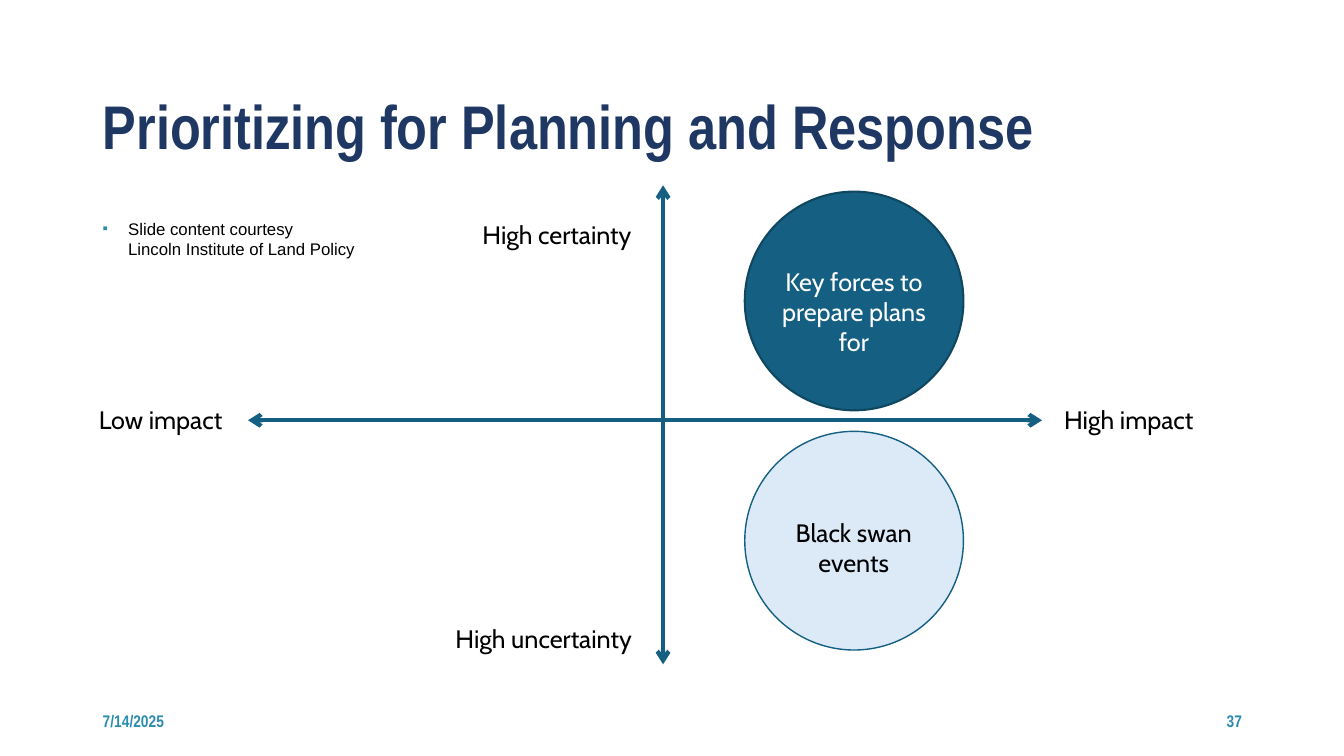
from dataclasses import dataclass

from lxml import etree
from pptx import Presentation
from pptx.dml.color import RGBColor
from pptx.enum.shapes import MSO_CONNECTOR, MSO_SHAPE
from pptx.enum.text import MSO_ANCHOR, PP_ALIGN
from pptx.oxml.ns import qn
from pptx.util import Cm, Pt

LEFT, CENTER, RIGHT = PP_ALIGN.LEFT, PP_ALIGN.CENTER, PP_ALIGN.RIGHT
TOP, MIDDLE = MSO_ANCHOR.TOP, MSO_ANCHOR.MIDDLE
STRAIGHT, OVAL = MSO_CONNECTOR.STRAIGHT, MSO_SHAPE.OVAL


@dataclass(frozen=True)
class Theme:
    navy: str = "1F3763"
    accent: str = "2C8CB0"
    teal: str = "156082"
    dark_teal: str = "104760"
    pale_blue: str = "DCEAF7"
    black: str = "000000"
    white: str = "FFFFFF"
    heading_font: str = "Arial Narrow"
    body_font: str = "Arial"
    label_font: str = "Cabin"
    title_size: int = 44
    label_size: int = 18
    small_size: int = 12


theme = Theme()


def add_text(box, text, font_name, size, color, bold=False, align=LEFT, anchor=TOP):
    shape = slide.shapes.add_textbox(*[Cm(value) for value in box])
    text_frame = shape.text_frame
    text_frame.text = text
    text_frame.word_wrap = True
    text_frame.vertical_anchor = anchor
    for paragraph in text_frame.paragraphs:
        paragraph.alignment = align
        for run in paragraph.runs:
            run.font.name = font_name
            run.font.size = Pt(size)
            run.font.bold = bold
            run.font.color.rgb = RGBColor.from_string(color)
    return text_frame.paragraphs[0]


presentation = Presentation()
presentation.slide_width, presentation.slide_height = Cm(33.87), Cm(19.05)
slide = presentation.slides.add_slide(presentation.slide_layouts[6])

margin, content_width = 2.34, 29.21

# Title
title = add_text((margin, 2.24, content_width, 2.06), "Prioritizing for Planning and Response",
                 theme.heading_font, theme.title_size, theme.navy, bold=True, anchor=MIDDLE)
title.line_spacing = 0.9

# Credit with a square bullet
credit = add_text((margin, 5.38, content_width, 12.01),
                  "Slide content courtesy\vLincoln Institute of Land Policy",
                  theme.body_font, theme.small_size, theme.black)
properties = credit._p.get_or_add_pPr()
properties.set("marL", str(Cm(0.64)))
properties.set("indent", str(-Cm(0.64)))
bullet_color = etree.SubElement(properties, qn("a:buClr"))
etree.SubElement(bullet_color, qn("a:srgbClr"), val=theme.accent)
etree.SubElement(properties, qn("a:buSzPct"), val="90000")
etree.SubElement(properties, qn("a:buFont"), typeface=theme.body_font)
etree.SubElement(properties, qn("a:buChar"), char="▪")

# Footer: date and slide number
footer_width = 7.62
for left, text, align in (
    (margin, "7/14/2025", LEFT),
    (margin + content_width - footer_width, "37", RIGHT),
):
    add_text((left, 17.65, footer_width, 1.02), text, theme.heading_font, theme.small_size,
             theme.accent, bold=True, align=align, anchor=MIDDLE)

# Impact and certainty axes
axis_x, axis_y = 16.71, 10.59
for ends in ((6.25, axis_y, 26.26, axis_y), (axis_x, 4.67, axis_x, 16.74)):
    axis = slide.shapes.add_connector(STRAIGHT, *[Cm(value) for value in ends])
    axis.line.color.rgb = RGBColor.from_string(theme.teal)
    axis.line.width = Pt(3)
    line = axis.line._get_or_add_ln()
    for end in ("a:headEnd", "a:tailEnd"):
        etree.SubElement(line, qn(end), type="arrow")
    etree.SubElement(axis._element.spPr, qn("a:effectLst"))

# Axis labels
for left, top, width, text in (
    (11.23, 15.57, 5.72, "High uncertainty"),
    (11.91, 5.41, 4.8, "High certainty"),
    (26.57, 10.06, 4.24, "High impact"),
    (2.24, 10.06, 4.11, "Low impact"),
):
    add_text((left, top, width, 1.07), text, theme.label_font, theme.label_size, theme.black)

# Circles on the high-impact side
circle_left, diameter = 18.77, 5.51
for top, fill, outline, outline_width, label_box, label, label_color in (
    (10.87, theme.pale_blue, theme.teal, 1,
     (19.51, 12.9, 4.01, 1.8), "Black swan events", theme.black),
    (4.83, theme.teal, theme.dark_teal, 1.5,
     (19.08, 6.58, 4.88, 2.57), "Key forces to\nprepare plans for", theme.white),
):
    circle = slide.shapes.add_shape(OVAL, Cm(circle_left), Cm(top), Cm(diameter), Cm(diameter))
    circle.shadow.inherit = False
    circle.fill.solid()
    circle.fill.fore_color.rgb = RGBColor.from_string(fill)
    circle.line.color.rgb = RGBColor.from_string(outline)
    circle.line.width = Pt(outline_width)
    add_text(label_box, label, theme.label_font, theme.label_size, label_color, align=CENTER)

presentation.save("out.pptx")
